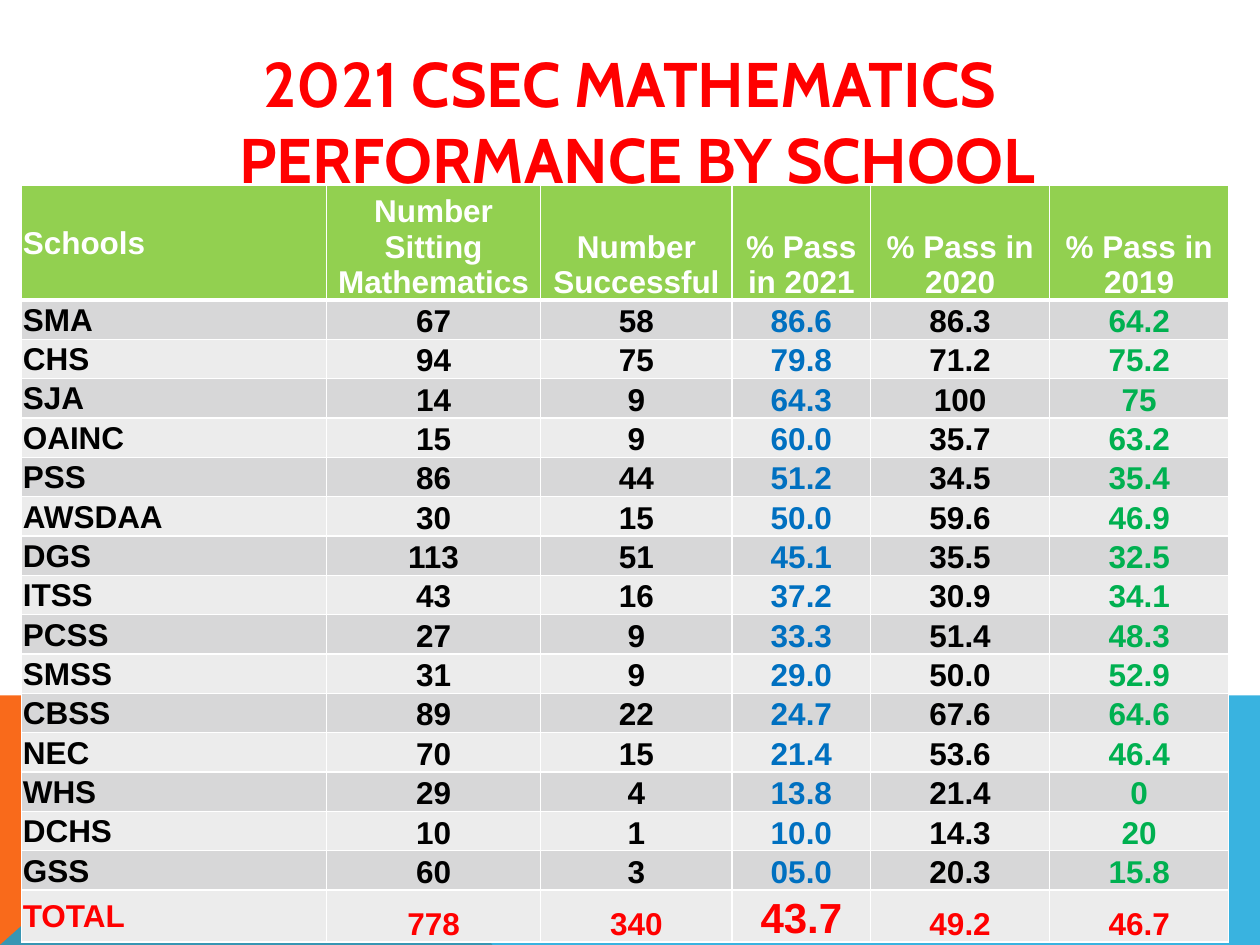
from dataclasses import dataclass

from lxml.etree import SubElement
from pptx import Presentation
from pptx.dml.color import RGBColor
from pptx.enum.text import MSO_ANCHOR as Anchor, PP_ALIGN as Align
from pptx.oxml.ns import qn
from pptx.slide import Slide
from pptx.util import Cm, Pt

WIDTH, HEIGHT = 25.4, 19.05
BAND_TOP, BAND_CORNER, BAND_FOOT = 14.02, 5.66, 9.93
RED, WHITE, BLACK, BLUE, GREEN = "FF0000", "FFFFFF", "000000", "0070C0", "00B050"

COLUMN_WIDTHS = [6.15, 4.32, 3.86, 2.79, 3.61, 3.61]
HEADER_HEIGHT, ROW_HEIGHT, TOTAL_HEIGHT = 2.13, 0.79, 0.98
COLUMN_COLORS = [BLACK, BLACK, BLACK, BLUE, BLACK, GREEN]
PASS_2021_COLUMN = 3

HEADINGS = ["Schools", "Number Sitting Mathematics", "Number Successful",
            "% Pass in 2021", "% Pass in 2020", "% Pass in 2019"]
SCHOOLS = [
    ["SMA", "67", "58", "86.6", "86.3", "64.2"],
    ["CHS", "94", "75", "79.8", "71.2", "75.2"],
    ["SJA", "14", "9", "64.3", "100", "75"],
    ["OAINC", "15", "9", "60.0", "35.7", "63.2"],
    ["PSS", "86", "44", "51.2", "34.5", "35.4"],
    ["AWSDAA", "30", "15", "50.0", "59.6", "46.9"],
    ["DGS", "113", "51", "45.1", "35.5", "32.5"],
    ["ITSS", "43", "16", "37.2", "30.9", "34.1"],
    ["PCSS", "27", "9", "33.3", "51.4", "48.3"],
    ["SMSS", "31", "9", "29.0", "50.0", "52.9"],
    ["CBSS", "89", "22", "24.7", "67.6", "64.6"],
    ["NEC", "70", "15", "21.4", "53.6", "46.4"],
    ["WHS", "29", "4", "13.8", "21.4", "0"],
    ["DCHS", "10", "1", "10.0", "14.3", "20"],
    ["GSS", "60", "3", "05.0", "20.3", "15.8"],
]
TOTAL = ["TOTAL", "778", "340", "43.7", "49.2", "46.7"]


def color(value):
    return RGBColor.from_string(value)


@dataclass
class SlideBuilder:
    slide: Slide
    title_font: str = "Cabin"
    table_font: str = "Arial"
    title_size: int = 36
    table_size: int = 18
    header_fill: str = "92D050"
    band_fills: tuple = ("ECECEC", "D7D7D8")

    def polygon(self, points, fill, opacity=100):
        corners = [(Cm(x), Cm(y)) for x, y in points]
        outline = self.slide.shapes.build_freeform(*corners[0])
        outline.add_line_segments(corners[1:], close=True)
        shape = outline.convert_to_shape()
        shape.shadow.inherit = False
        shape.line.fill.background()
        shape.fill.solid()
        shape.fill.fore_color.rgb = color(fill)
        if opacity < 100:
            fill_color = shape.fill._xPr.find(f".//{qn('a:srgbClr')}")
            SubElement(fill_color, qn("a:alpha"), val=str(opacity * 1000))

    def run(self, paragraph, text, font, size, text_color):
        run = paragraph.add_run()
        run.text = text
        run.font.name, run.font.size, run.font.bold = font, Pt(size), True
        run.font.color.rgb = color(text_color)

    def title(self, lines, left, top, width, height):
        shape = self.slide.shapes.add_textbox(Cm(left), Cm(top), Cm(width), Cm(height))
        frame = shape.text_frame
        frame.word_wrap = True
        frame.vertical_anchor = Anchor.MIDDLE
        paragraph = frame.paragraphs[0]
        paragraph.alignment = Align.CENTER
        for index, line in enumerate(lines):
            if index:
                paragraph.add_line_break()
            self.run(paragraph, line, self.title_font, self.title_size, RED)

    def borders(self, cell, top, bottom):
        """Draw white cell borders; top and bottom widths are in points."""
        properties = cell._tc.get_or_add_tcPr()
        for side, width in (("L", 1), ("R", 1), ("T", top), ("B", bottom)):
            line = SubElement(properties, qn(f"a:ln{side}"), w=str(Pt(width)))
            fill = SubElement(line, qn("a:solidFill"))
            SubElement(fill, qn("a:srgbClr"), val=WHITE)

    def cell(self, cell, text, fill, text_color, size, is_name):
        cell.margin_left = cell.margin_right = cell.margin_top = Cm(0.03)
        cell.margin_bottom = 0
        cell.vertical_anchor = Anchor.MIDDLE if is_name else Anchor.BOTTOM
        cell.fill.solid()
        cell.fill.fore_color.rgb = color(fill)
        paragraph = cell.text_frame.paragraphs[0]
        paragraph.alignment = Align.LEFT if is_name else Align.CENTER
        self.run(paragraph, text, self.table_font, size, text_color)

    def results_table(self, left, top):
        rows = [HEADINGS, *SCHOOLS, TOTAL]
        last = len(rows) - 1
        heights = [HEADER_HEIGHT, *[ROW_HEIGHT] * len(SCHOOLS), TOTAL_HEIGHT]
        table = self.slide.shapes.add_table(
            len(rows), len(HEADINGS), Cm(left), Cm(top),
            Cm(sum(COLUMN_WIDTHS)), Cm(sum(heights))).table
        table.first_row = table.horz_banding = False
        for column, width in zip(table.columns, COLUMN_WIDTHS):
            column.width = Cm(width)
        for r, values in enumerate(rows):
            table.rows[r].height = Cm(heights[r])
            fill = self.band_fills[r % 2] if r else self.header_fill
            for c, text in enumerate(values):
                text_color = {0: WHITE, last: RED}.get(r, COLUMN_COLORS[c])
                is_highlight = r == last and c == PASS_2021_COLUMN
                size = 24 if is_highlight else self.table_size
                cell = table.cell(r, c)
                self.borders(cell, top=3 if r == 1 else 1, bottom=1 if r else 3)
                self.cell(cell, text, fill, text_color, size, is_name=c == 0)


def main():
    presentation = Presentation()
    presentation.slide_width, presentation.slide_height = Cm(WIDTH), Cm(HEIGHT)
    builder = SlideBuilder(presentation.slides.add_slide(presentation.slide_layouts[6]))
    builder.polygon([(0, HEIGHT), (0, BAND_TOP), (BAND_CORNER, BAND_TOP),
                     (BAND_FOOT, HEIGHT)], "F96A1B")
    builder.polygon([(0, HEIGHT), (BAND_CORNER, BAND_TOP), (WIDTH, BAND_TOP),
                     (WIDTH, HEIGHT)], "08A1D9", opacity=80)
    builder.title(["2021 CSEC MATHEMATICS", " PERFORMANCE BY SCHOOL"],
                  0, 0.84, WIDTH, 3.18)
    builder.results_table(0.43, 3.73)
    presentation.save("out.pptx")


if __name__ == "__main__":
    main()
